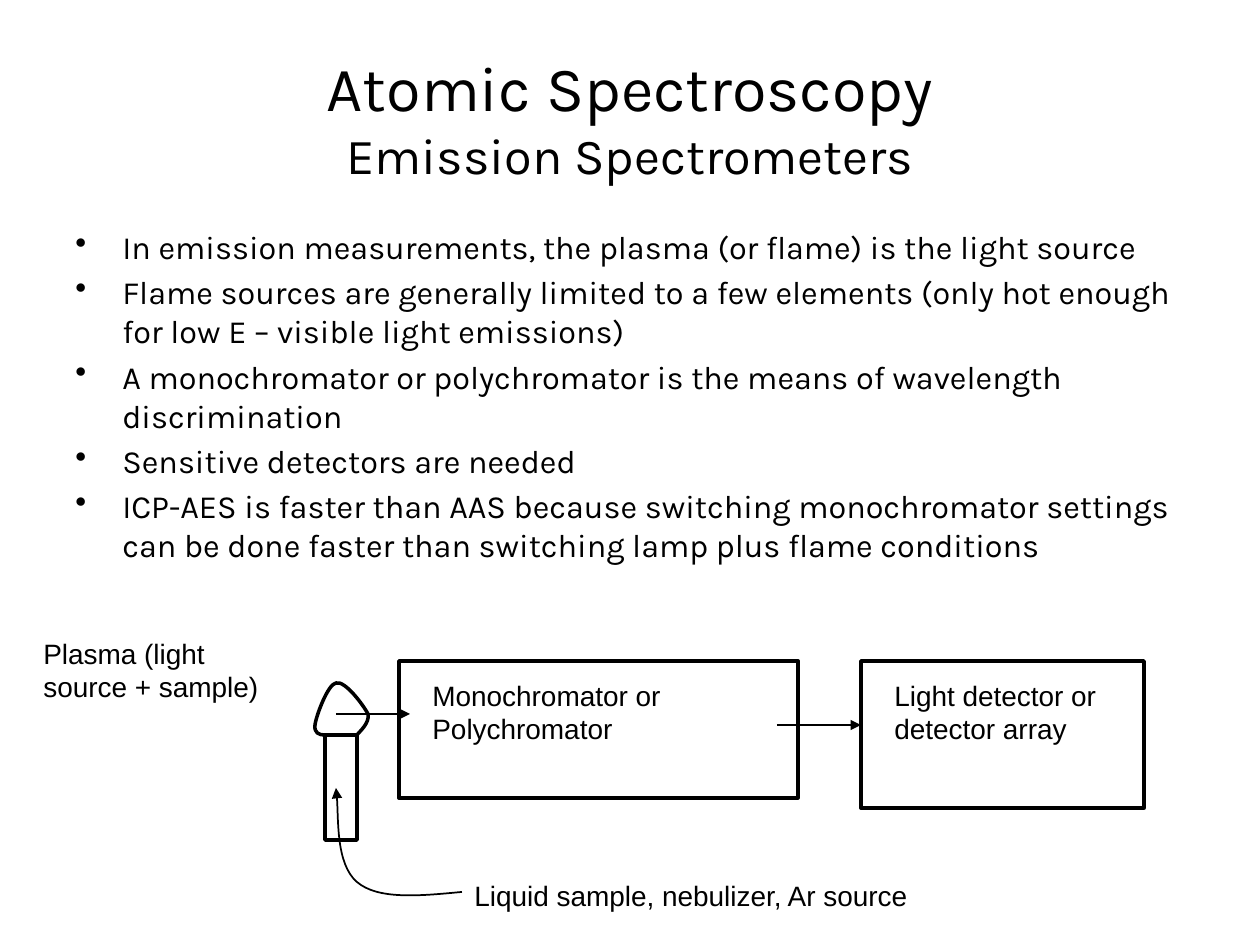
import pptx
import pptx.util
import pptx.dml.color
import pptx.enum.shapes
import pptx.enum.text
import pptx.oxml
import pptx.oxml.ns
import lxml.etree

PX_PER_INCH = 126
BLACK = pptx.dml.color.RGBColor(0, 0, 0)
WHITE = pptx.dml.color.RGBColor(255, 255, 255)

BULLETS = [
    "In emission measurements, the plasma (or flame) is the light source",
    "Flame sources are generally limited to a few elements "
    "(only hot enough for low E – visible light emissions)",
    "A monochromator or polychromator is the means of wavelength discrimination",
    "Sensitive detectors are needed",
    "ICP-AES is faster than AAS because switching monochromator settings "
    "can be done faster than switching lamp plus flame conditions",
]


def px(length):
    return pptx.util.Emu(round(length * 914400 / PX_PER_INCH))


def sub(parent, tag, **attributes):
    return lxml.etree.SubElement(parent, pptx.oxml.ns.qn(tag), attributes)


def style_font(font, name, size):
    font.name = name
    font.size = pptx.util.Pt(size)
    font.color.rgb = BLACK


def add_text_box(page, left, top, width, height):
    frame = page.shapes.add_textbox(px(left), px(top), px(width), px(height)).text_frame
    frame.word_wrap = True
    return frame


def add_title(page, left, top, width, height):
    frame = add_text_box(page, left, top, width, height)
    frame.vertical_anchor = pptx.enum.text.MSO_ANCHOR.MIDDLE
    para = frame.paragraphs[0]
    para.alignment = pptx.enum.text.PP_ALIGN.CENTER
    heading = para.add_run()
    heading.text = "Atomic Spectroscopy"
    style_font(heading.font, "Karla", 36)
    para.add_line_break()
    subheading = para.add_run()
    subheading.text = "Emission Spectrometers"
    style_font(subheading.font, "Karla", 28.8)


def add_bullets(page, left, top, width, height):
    frame = add_text_box(page, left, top, width, height)
    for index, text in enumerate(BULLETS):
        para = frame.add_paragraph() if index else frame.paragraphs[0]
        para.text = text
        para.space_before = pptx.util.Pt(3.7)
        style_font(para.font, "Karla", 18.5)
        properties = para._p.get_or_add_pPr()
        properties.set("marL", str(px(47)))
        properties.set("indent", str(-px(47)))
        bullet = pptx.oxml.parse_xml(
            f'<a:buChar {pptx.oxml.ns.nsdecls("a")} char="•"/>')
        properties.find(pptx.oxml.ns.qn("a:defRPr")).addprevious(bullet)


def add_caption(page, left, top, width, height, text):
    frame = add_text_box(page, left, top, width, height)
    frame.auto_size = pptx.enum.text.MSO_AUTO_SIZE.SHAPE_TO_FIT_TEXT
    para = frame.paragraphs[0]
    para.text = text
    style_font(para.font, "Arial", 16)


def outline(shape, weight):
    shape.shadow.inherit = False
    shape.fill.background()
    shape.line.color.rgb = BLACK
    shape.line.width = pptx.util.Pt(weight)


def add_arrowhead(shape):
    sub(shape.get_or_add_ln(), "a:tailEnd", type="triangle")


def add_rectangle(page, left, top, width, height):
    shape = page.shapes.add_shape(
        pptx.enum.shapes.MSO_SHAPE.RECTANGLE, px(left), px(top), px(width), px(height))
    outline(shape, 2)


def add_instrument(page, left, top, width, height, text):
    add_rectangle(page, left, top, width, height)
    add_caption(page, left + 21, top + 11, width - 42, 81, text)


def add_curve(page, left, top, points, weight):
    """Draw a Bézier chain: a start, then two controls and an end per segment."""
    places = [(px(left + x), px(top + y)) for x, y in points]
    builder = page.shapes.build_freeform(*places[0], scale=1.0)
    builder.add_line_segments(places[1:], close=False)
    curve = builder.convert_to_shape()
    track = curve._element.find(".//" + pptx.oxml.ns.qn("a:path"))
    steps = track.findall(pptx.oxml.ns.qn("a:lnTo"))
    for first in range(0, len(steps), 3):
        segment = sub(track, "a:cubicBezTo")
        for step in steps[first:first + 3]:
            segment.append(step[0])
            track.remove(step)
    outline(curve, weight)
    return curve


def add_arrow(page, left, right, y):
    arrow = page.shapes.add_connector(
        pptx.enum.shapes.MSO_CONNECTOR.STRAIGHT, px(left), px(y), px(right), px(y))
    arrow.line.color.rgb = BLACK
    arrow.line.width = pptx.util.Pt(0.75)
    add_arrowhead(arrow)
    sub(arrow._element.spPr, "a:effectLst")


def add_spectrometer(page, left, top):
    add_rectangle(page, left + 294, top + 105, 32, 105)
    flame = [(294, 105), (288, 105), (283, 103), (284, 95),
             (285, 86), (297, 54), (305, 53),
             (314, 50), (333, 76), (337, 84),
             (339, 93), (328, 102), (326, 105)]
    add_curve(page, left, top, flame, 2)
    add_caption(page, left, top, 252, 81, "Plasma (light source + sample)")

    sample_feed = [(431, 262), (389, 266), (347, 270), (326, 252),
                   (305, 234), (308, 174), (305, 158)]
    add_arrowhead(add_curve(page, left, top, sample_feed, 1))

    add_instrument(page, left + 368, top + 31, 399, 137, "Monochromator or Polychromator")
    add_arrow(page, left + 305, left + 379, top + 84)
    add_arrow(page, left + 746, left + 830, top + 95)
    add_instrument(page, left + 830, top + 31, 283, 147, "Light detector or detector array")
    add_caption(page, left + 431, top + 242, 483, 47, "Liquid sample, nebulizer, Ar source")


def main():
    deck = pptx.Presentation()
    deck.slide_width, deck.slide_height = px(1260), px(945)
    page = deck.slides.add_slide(deck.slide_layouts[6])
    page.background.fill.solid()
    page.background.fill.fore_color.rgb = WHITE
    add_title(page, 63, 38, 1134, 157)
    add_bullets(page, 63, 221, 1134, 388)
    add_spectrometer(page, 31, 630)
    deck.save("out.pptx")


if __name__ == "__main__":
    main()
